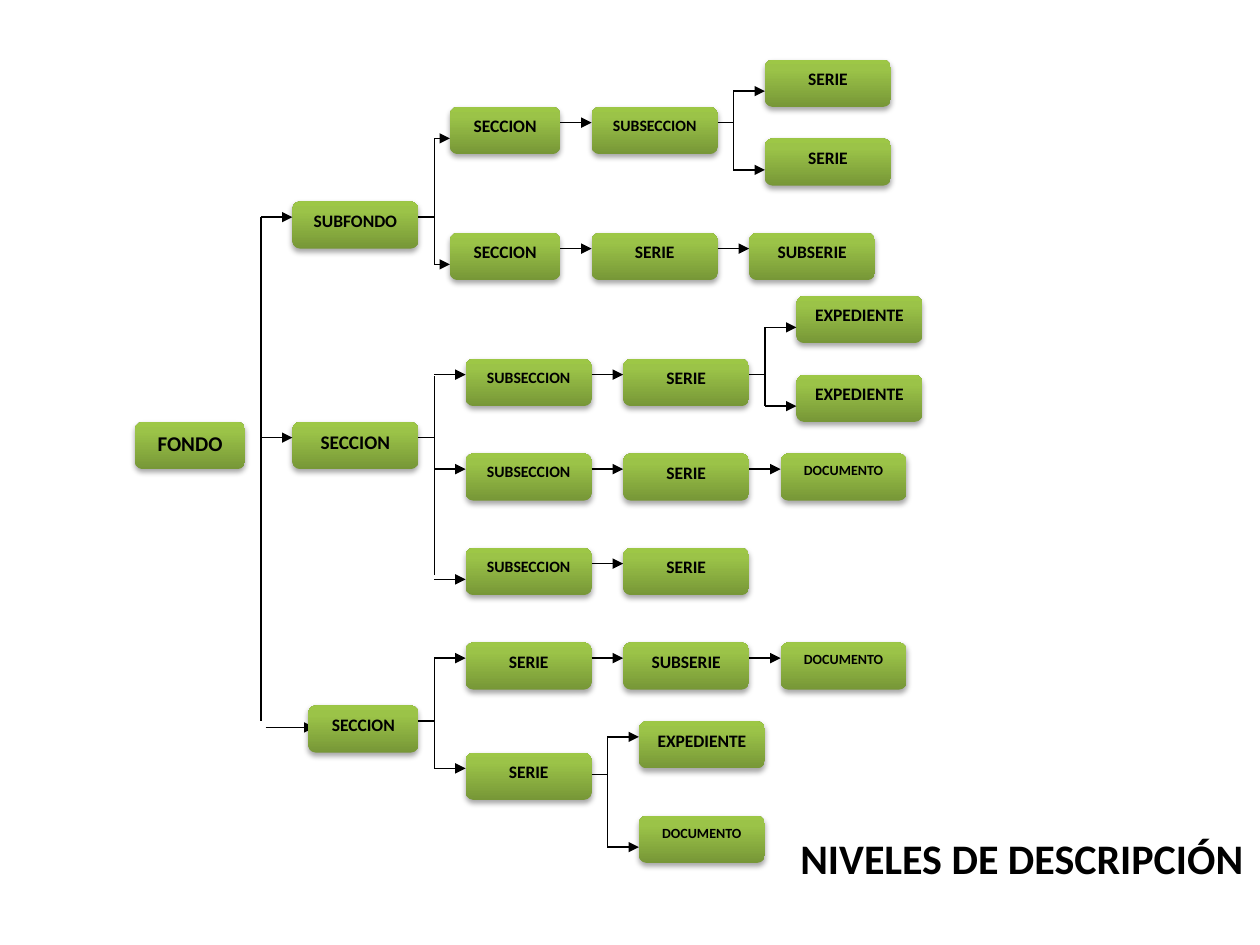
from lxml.etree import SubElement
from pptx import Presentation
from pptx.dml.color import RGBColor
from pptx.enum.shapes import MSO_CONNECTOR as Connector, MSO_SHAPE as Shape
from pptx.enum.text import MSO_ANCHOR as Anchor, MSO_AUTO_SIZE as AutoSize, PP_ALIGN as Align
from pptx.oxml import parse_xml
from pptx.oxml.ns import nsdecls, qn
from pptx.util import Cm, Pt

FONT = "Calibri"
BLACK = "000000"
GRADIENT = [(0, "779737"), (80, "9BC348"), (100, "9DC746")]
GRID = 1.27 / 4
LEFT, TOP = 0.18, 0.25
BOX_HEIGHT = 3

# Text, column, row, width in grid steps, font size
BOXES = [
    ("FONDO", 8, 26, 7, 12),
    ("SUBFONDO", 18, 12, 8, 10),
    ("SECCION", 28, 6, 7, 10),
    ("SECCION", 28, 14, 7, 10),
    ("SUBSECCION", 37, 6, 8, 9),
    ("SERIE", 48, 3, 8, 10),
    ("SERIE", 48, 8, 8, 10),
    ("SERIE", 37, 14, 8, 10),
    ("SUBSERIE", 47, 14, 8, 10),
    ("SECCION", 18, 26, 8, 11),
    ("SUBSECCION", 29, 22, 8, 9),
    ("SUBSECCION", 29, 28, 8, 9),
    ("SUBSECCION", 29, 34, 8, 9),
    ("SERIE", 39, 22, 8, 10),
    ("SERIE", 39, 28, 8, 10),
    ("SERIE", 39, 34, 8, 10),
    ("EXPEDIENTE", 50, 18, 8, 10),
    ("EXPEDIENTE", 50, 23, 8, 10),
    ("DOCUMENTO", 49, 28, 8, 8),
    ("SECCION", 19, 44, 7, 10),
    ("SERIE", 29, 40, 8, 10),
    ("SERIE", 29, 47, 8, 10),
    ("SUBSERIE", 39, 40, 8, 10),
    ("DOCUMENTO", 49, 40, 8, 8),
    ("EXPEDIENTE", 40, 45, 8, 10),
    ("DOCUMENTO", 40, 51, 8, 8),
]
# Column of the spine, its top and bottom, column of the arrow tips, arrow rows
BRANCHES = [
    (16, 13, 45, 18, [13, 27]),
    (27, 8, 16, 28, [8, 16]),
    (46, 5, 10, 48, [5, 10]),
    (27, 23.1, 35.7, 29, [23, 29, 36]),
    (48, 20, 25, 50, [20, 25]),
    (27, 41, 48, 29, [41, 48]),
    (38, 46, 53, 40, [46, 53]),
]
# Column and row where each one-step stem leaves its box
STEMS = [(26, 13), (45, 7), (26, 27), (47, 23), (26, 45), (37, 48.4)]
# Start column, end column, row
ARROWS = [
    (35, 37, 7), (35, 37, 15), (45, 47, 15),
    (37, 39, 23), (37, 39, 29), (47, 49, 29), (37, 39, 35),
    (37, 39, 41), (47, 49, 41),
]


def color(hex_code):
    """Return the colour for a hex string."""
    return RGBColor.from_string(hex_code)


def grid_x(column):
    """Return the horizontal place of a grid column."""
    return Cm(LEFT + column * GRID)


def grid_y(row):
    """Return the vertical place of a grid row."""
    return Cm(TOP + row * GRID)


def format_text(paragraph, text, size, alignment):
    """Write bold black text into a paragraph."""
    paragraph.text = text
    paragraph.alignment = alignment
    paragraph.font.name = FONT
    paragraph.font.size = Pt(size)
    paragraph.font.bold = True
    paragraph.font.color.rgb = color(BLACK)


def add_gradient_and_shadow(shape):
    """Give a shape the green gradient and a soft shadow below it."""
    stops = "".join(
        f'<a:gs pos="{position * 1000}"><a:srgbClr val="{hex_code}"/></a:gs>'
        for position, hex_code in GRADIENT
    )
    gradient = parse_xml(
        f'<a:gradFill {nsdecls("a")} rotWithShape="1"><a:gsLst>{stops}</a:gsLst>'
        '<a:lin ang="16200000" scaled="0"/></a:gradFill>'
    )
    shape.line.fill.background()
    shape.line._ln.addprevious(gradient)
    shape.shadow.inherit = False
    effects = shape._element.spPr.find(qn("a:effectLst"))
    effects.append(parse_xml(
        f'<a:outerShdw {nsdecls("a")} blurRad="40000" dist="23000" dir="5400000" '
        f'rotWithShape="0"><a:srgbClr val="{BLACK}"><a:alpha val="35000"/>'
        '</a:srgbClr></a:outerShdw>'
    ))


def add_box(slide, text, column, row, width, size):
    """Add one level of the hierarchy."""
    shape = slide.shapes.add_shape(
        Shape.FLOWCHART_ALTERNATE_PROCESS, grid_x(column), grid_y(row),
        Cm(width * GRID), Cm(BOX_HEIGHT * GRID),
    )
    add_gradient_and_shadow(shape)
    shape.text_frame.vertical_anchor = Anchor.TOP
    format_text(shape.text_frame.paragraphs[0], text, size, Align.CENTER)


def add_line(slide, start, end, arrow=False):
    """Add a thin line between two grid points, with an arrowhead if asked."""
    connector = slide.shapes.add_connector(
        Connector.STRAIGHT, grid_x(start[0]), grid_y(start[1]),
        grid_x(end[0]), grid_y(end[1]),
    )
    connector.line.color.rgb = color(BLACK)
    connector.line.width = Pt(0.75)
    if arrow:
        SubElement(connector.line._ln, qn("a:tailEnd"), type="triangle")
    SubElement(connector._element.spPr, qn("a:effectLst"))


def add_branch(slide, spine, top, bottom, tip, rows):
    """Add a vertical spine with an arrow leaving it at each row."""
    add_line(slide, (spine, top), (spine, bottom))
    for row in rows:
        add_line(slide, (spine, row), (tip, row), arrow=True)


def add_title(slide, text):
    """Place the slide title at the bottom right."""
    title = slide.shapes.title
    title.left, title.top, title.width, title.height = Cm(15.88), Cm(16.66), Cm(9.53), Cm(1.27)
    frame = title.text_frame
    frame.word_wrap = False
    frame.auto_size = AutoSize.SHAPE_TO_FIT_TEXT
    frame.vertical_anchor = Anchor.TOP
    format_text(frame.paragraphs[0], text, 24, Align.LEFT)


def main():
    """Build the slide and save it."""
    presentation = Presentation()
    presentation.slide_width, presentation.slide_height = Cm(25.4), Cm(19.05)
    slide = presentation.slides.add_slide(presentation.slide_layouts[5])
    add_title(slide, "NIVELES DE DESCRIPCIÓN")
    add_line(slide, (16.3, 45.4), (19.4, 45.4), arrow=True)
    for box in BOXES:
        add_box(slide, *box)
    for branch in BRANCHES:
        add_branch(slide, *branch)
    for column, row in STEMS:
        add_line(slide, (column, row), (column + 1, row))
    for start, end, row in ARROWS:
        add_line(slide, (start, row), (end, row), arrow=True)
    presentation.save("out.pptx")


if __name__ == "__main__":
    main()
